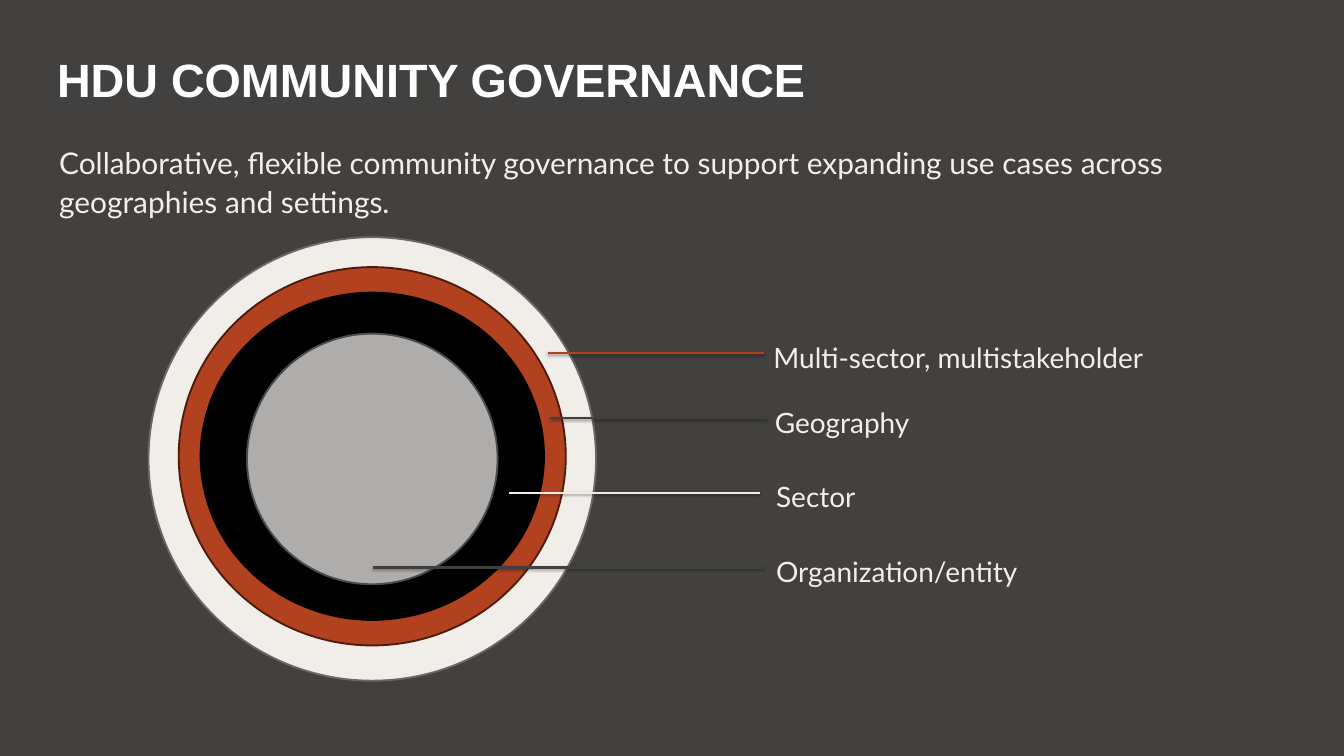
from lxml import etree
from pptx import Presentation, util as u
from pptx.dml.color import RGBColor
from pptx.enum import shapes, text
from pptx.oxml.ns import qn

DARK = RGBColor(0x42, 0x41, 0x3F)
WHITE = RGBColor(0xFF, 0xFF, 0xFF)
CREAM = RGBColor(0xF2, 0xEF, 0xEA)
IVORY = RGBColor(0xF1, 0xEE, 0xE9)
STONE = RGBColor(0x6A, 0x68, 0x66)
RUST = RGBColor(0xB2, 0x41, 0x20)
BROWN = RGBColor(0x4E, 0x1C, 0x0E)
BLACK = RGBColor(0, 0, 0)
GREY = RGBColor(0xAF, 0xAD, 0xAB)
SLATE = RGBColor(0x4D, 0x4C, 0x4B)
COAL = RGBColor(0x42, 0x40, 0x3E)

WIDE, HIGH = 20, 11.25
MID = 5.54  # shared centre of the rings, inches from the left
RISE = 0.27  # label top above its line

TITLE = "HDU COMMUNITY GOVERNANCE"
LEAD = ("Collaborative, flexible community governance to support "
        "expanding use cases across geographies and settings.")

# outermost first: width, height, centre y, fill, outline
RINGS = [
    (6.66, 6.6, 6.83, IVORY, STONE),
    (5.76, 5.63, 6.79, RUST, BROWN),
    (5.11, 4.87, 6.79, BLACK, BLACK),
    (3.73, 3.73, 6.83, GREY, SLATE),
]

# label, its left and width, line y, start x, end x, colour, weight, shadow %
LEVELS = [
    ("Multi-sector, multistakeholder", 11.51, 6.91, 5.25, 8.15, 11.37, RUST, 2, 38),
    ("Geography", 11.53, 2.63, 6.22, 8.19, 11.41, COAL, 2, 38),
    ("Sector", 11.55, 1.29, 7.33, 7.58, 11.31, IVORY, 2, 38),
    ("Organization/entity", 11.55, 5.46, 8.44, 5.55, 11.37, COAL, 3, 35),
]


def write(slide, words, box, size, color=CREAM, face="Lato", bold=False,
          lead=None, inset=(0, 0)):
    frame = slide.shapes.add_textbox(*map(u.Inches, box)).text_frame
    frame.word_wrap = True
    frame.margin_left = frame.margin_right = u.Inches(inset[0])
    frame.margin_top = frame.margin_bottom = u.Inches(inset[1])
    frame.vertical_anchor = text.MSO_ANCHOR.TOP
    para = frame.paragraphs[0]
    if lead:
        para.line_spacing = u.Pt(lead)
    run = para.add_run()
    run.text = words
    font = run.font
    font.name, font.size, font.bold = face, u.Pt(size), bold
    font.color.rgb = color


def ring(slide, wide, high, mid, fill, edge):
    box = (MID - wide / 2, mid - high / 2, wide, high)
    disc = slide.shapes.add_shape(shapes.MSO_SHAPE.OVAL, *map(u.Inches, box))
    disc.shadow.inherit = False
    disc.fill.solid()
    disc.fill.fore_color.rgb = fill
    disc.line.color.rgb = edge
    disc.line.width = u.Pt(2)


def shade(line, share):
    """Drop a soft black shadow straight down from the line."""
    props = line._element.spPr
    effects = etree.SubElement(props, qn("a:effectLst"))
    drop = etree.SubElement(effects, qn("a:outerShdw"), blurRad=str(u.Pt(3.1)),
                            dist=str(u.Pt(1.6)), dir="5400000", rotWithShape="0")
    tint = etree.SubElement(drop, qn("a:srgbClr"), val=str(BLACK))
    etree.SubElement(tint, qn("a:alpha"), val=str(share * 1000))


def level(slide, words, left, wide, y, start, end, color, weight, share):
    write(slide, words, (left, y - RISE, wide, 2 * RISE), 30, lead=42)
    line = slide.shapes.add_connector(
        shapes.MSO_CONNECTOR.STRAIGHT, *map(u.Inches, (start, y, end, y)))
    line.line.color.rgb = color
    line.line.width = u.Pt(weight)
    shade(line, share)


def main():
    deck = Presentation()
    deck.slide_width, deck.slide_height = u.Inches(WIDE), u.Inches(HIGH)
    slide = deck.slides.add_slide(deck.slide_layouts[6])
    slide.background.fill.solid()
    slide.background.fill.fore_color.rgb = DARK

    write(slide, TITLE, (0.75, 0.71, 18.25, 1.61), 50, WHITE, "Arial", True,
          inset=(0.1, 0.05))
    write(slide, LEAD, (0.88, 2.09, 17.61, 1.16), 32, lead=42.6)
    for item in RINGS:
        ring(slide, *item)
    for item in LEVELS:
        level(slide, *item)
    deck.save("out.pptx")


if __name__ == "__main__":
    main()
